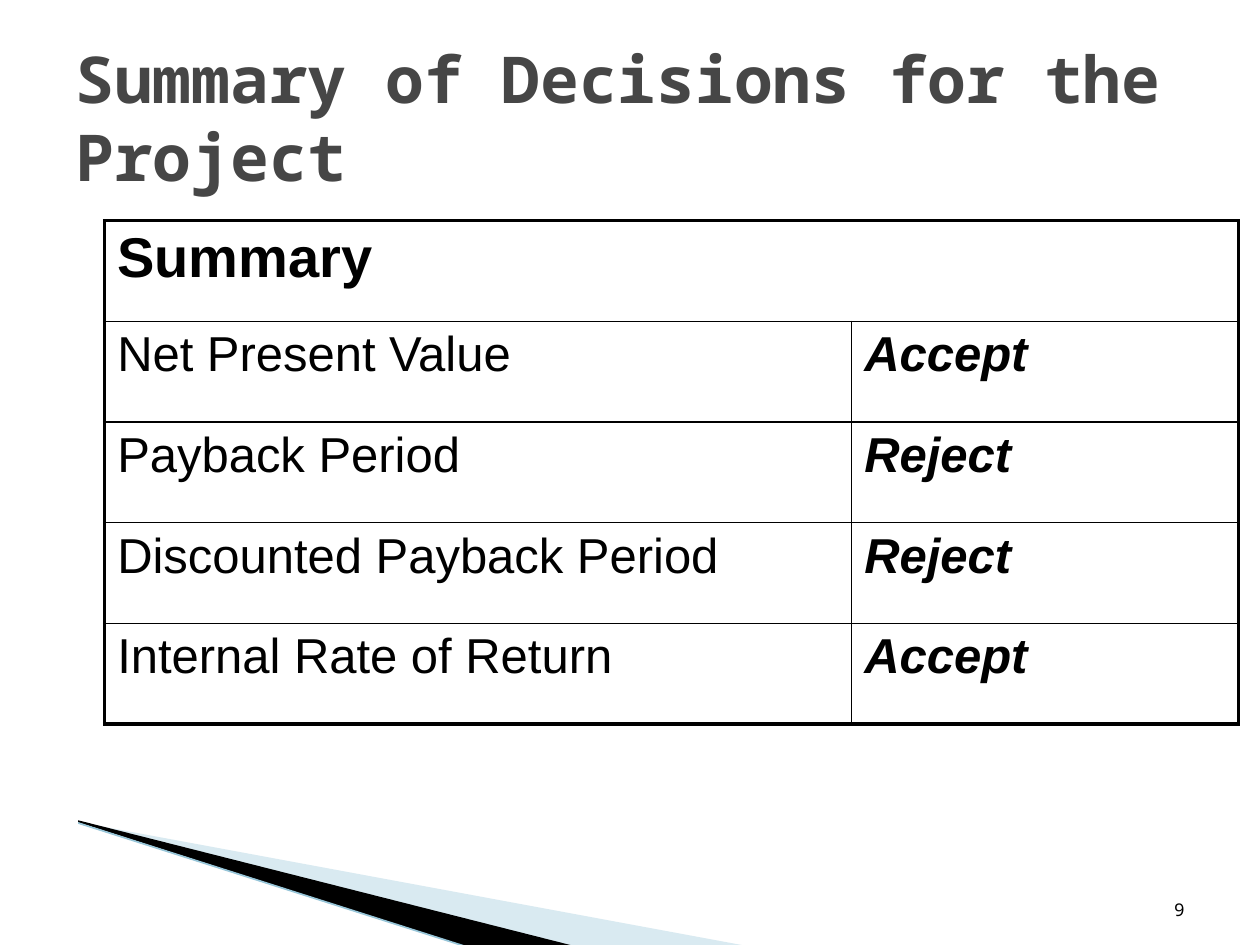
from lxml.etree import SubElement
from pptx import Presentation
from pptx.dml.color import RGBColor
from pptx.enum.shapes import MSO_CONNECTOR, MSO_SHAPE
from pptx.enum.text import MSO_ANCHOR, PP_ALIGN
from pptx.oxml.ns import qn
from pptx.util import Cm, Pt

BLACK = RGBColor(0x00, 0x00, 0x00)
WHITE = RGBColor(0xFF, 0xFF, 0xFF)
GREY = RGBColor(0x46, 0x46, 0x46)
PALE = RGBColor(0xA0, 0xCB, 0xDC)
TEAL = RGBColor(0x97, 0xC5, 0xD8)


def write(tf, text, color, align=PP_ALIGN.LEFT, **fmt):
    tf.word_wrap = True
    p = tf.paragraphs[0]
    p.alignment = align
    r = p.add_run()
    r.text = text
    r.font.color.rgb = color
    for name, value in fmt.items():
        setattr(r.font, name, value)


def border(cell, side, width):
    ln = SubElement(cell._tc.get_or_add_tcPr(), qn(f"a:ln{side}"), w=str(Pt(width)))
    fill = SubElement(ln, qn("a:solidFill"))
    SubElement(fill, qn("a:srgbClr"), val=str(BLACK))


prs = Presentation()
prs.slide_width, prs.slide_height = Cm(25.4), Cm(19.05)
s = prs.slides.add_slide(prs.slide_layouts[6])

wedges = [
    (PALE, [(1.4, 16.54), (15.11, 19.08), (11.58, 19.08), (1.4, 16.51)]),
    (BLACK, [(1.35, 16.48), (11.61, 19.08), (9.45, 19.1), (1.37, 16.51)]),
]
for color, points in wedges:
    points = [(Cm(x), Cm(y)) for x, y in points]
    fb = s.shapes.build_freeform(*points[0])
    fb.add_line_segments(points[1:], close=True)
    sp = fb.convert_to_shape()
    sp.shadow.inherit = False
    sp.fill.solid()
    sp.fill.fore_color.rgb = color
    sp.line.fill.background()
    if color == PALE:
        clr = sp._element.spPr.find(qn("a:solidFill")).find(qn("a:srgbClr"))
        SubElement(clr, qn("a:alpha"), val="40000")

edge = s.shapes.add_connector(MSO_CONNECTOR.STRAIGHT, Cm(-0.03), Cm(16.08), Cm(9.45), Cm(19.1))
edge.line.color.rgb = TEAL
edge.line.width = Pt(0.95)
SubElement(edge._element.spPr, qn("a:effectLst"))

strip = s.shapes.add_shape(MSO_SHAPE.RECTANGLE, 0, 0, Cm(1.57), Cm(19))
strip.shadow.inherit = False
strip.fill.solid()
strip.fill.fore_color.rgb = WHITE
strip.line.color.rgb = WHITE
strip.line.width = Pt(0.75)

title = s.shapes.add_textbox(Cm(1.27), Cm(0.76), Cm(22.86), Cm(3.18))
title.text_frame.vertical_anchor = MSO_ANCHOR.MIDDLE
write(title.text_frame, "Summary of Decisions for the Project", GREY,
      name="Noto Sans Mono", size=Pt(36.9), bold=True)

rows = [
    ("Summary", ""),
    ("Net Present Value", "Accept"),
    ("Payback Period", "Reject"),
    ("Discounted Payback Period", "Reject"),
    ("Internal Rate of Return", "Accept"),
]
last = len(rows) - 1
frame = s.shapes.add_table(len(rows), 2, Cm(2.11), Cm(4.45), Cm(22.86), Cm(10.15))
table = frame.table
table.first_row = table.horz_banding = False
for col, width in zip(table.columns, (15.06, 7.8)):
    col.width = Cm(width)
table.cell(0, 0).merge(table.cell(0, 1))
for i, row in enumerate(rows):
    table.rows[i].height = Cm(2.03)
    for j, text in enumerate(row):
        cell = table.cell(i, j)
        outer = {"L": j == 0, "R": j == 1 or i == 0, "T": i == 0, "B": i == last}
        for side, thick in outer.items():
            border(cell, side, 2.25 if thick else 1)
        cell.fill.solid()
        cell.fill.fore_color.rgb = WHITE
        if text:
            write(cell.text_frame, text, BLACK, name="Arial", size=Pt(28 if i else 32),
                  bold=i == 0 or j == 1, italic=j == 1)

number = s.shapes.add_textbox(Cm(18.21), Cm(17.35), Cm(5.92), Cm(1.32))
number.text_frame.vertical_anchor = MSO_ANCHOR.BOTTOM
write(number.text_frame, "9", BLACK, PP_ALIGN.RIGHT, name="Noto Sans Mono", size=Pt(10))

prs.save("out.pptx")
